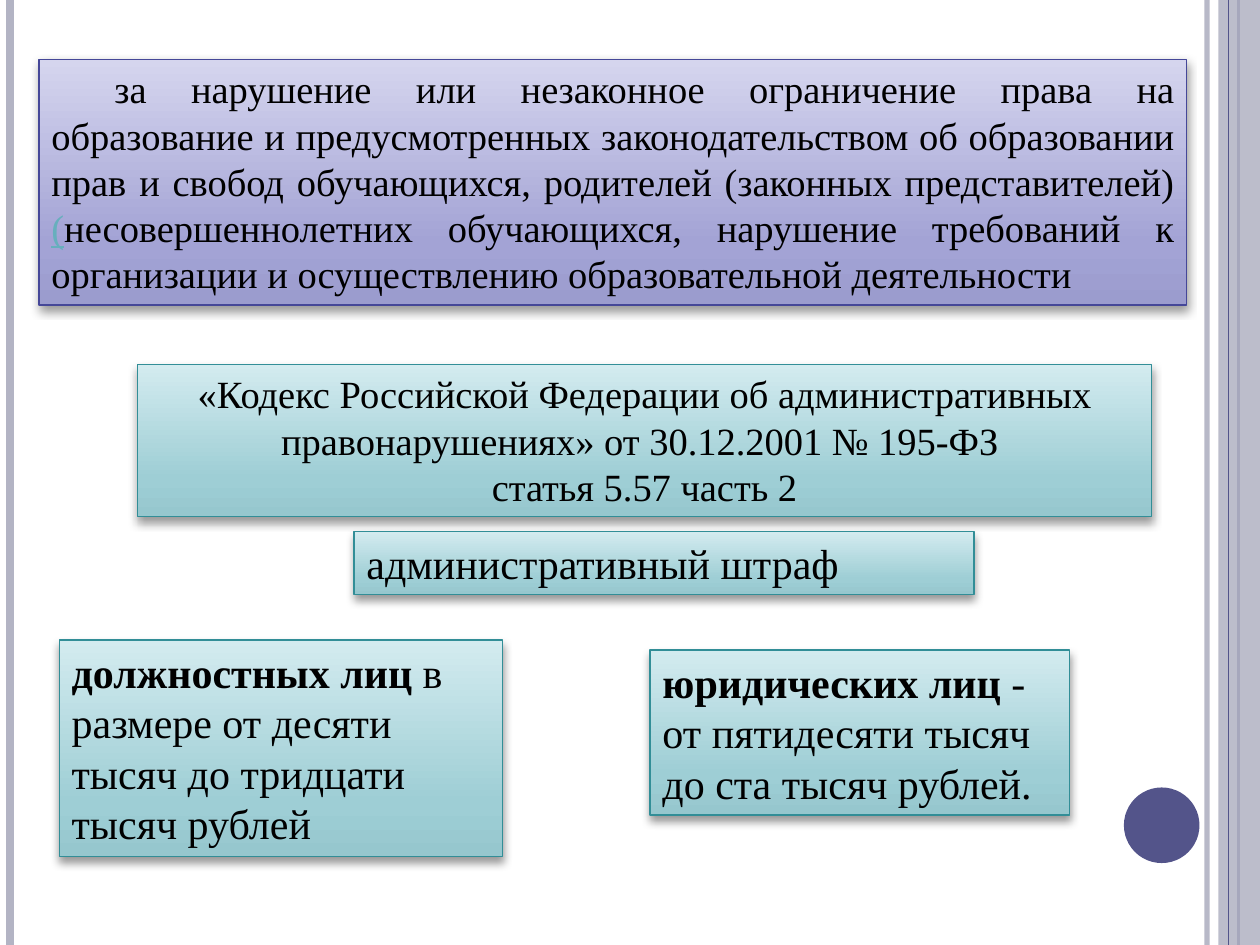
from copy import deepcopy

from lxml import etree
from pptx import Presentation, util as u
from pptx.dml.color import RGBColor
from pptx.enum import shapes, text
from pptx.oxml.ns import qn

THEME = {
    "font": "Times New Roman",
    "ink": "000000",
    "link": "67AFBD",
    "accent": "53548A",
    "stripe": "B3B4C4",
    "violet": {"stops": ("9B9CCE", "A3A3D5", "D5D5EE"), "line": "454798"},
    "teal": {"stops": ("96C7CE", "9ECED5", "D3EBEF"), "line": "328E97"},
    "stop_positions": (0, 0.25, 1),
    "text": 22,
    "large": 24,
    "outline": 0.75,
}

PAGE_WIDTH, PAGE_HEIGHT = 10, 7.5
LEFT, CENTER, JUSTIFY = (text.PP_ALIGN.LEFT, text.PP_ALIGN.CENTER,
                         text.PP_ALIGN.JUSTIFY)

# x, colour, width in points, opacity in percent
BACK_RULES = [(9.58, "stripe", 3, 93), (0.08, "stripe", 4.5, 100),
              (9.83, "accent", 1.5, 100)]
FRONT_RULE = (9.75, "accent", 0.75, 100)
SIDE_BAND = (9.67, 0, 0.33, PAGE_HEIGHT)
DOT = (8.92, 6.25, 0.6, 0.6)

# place, palette, size, alignment, first-line indent, (wording, style) runs
BOXES = [
    ((0.31, 0.47, 9.11, 1.95), "violet", "text", JUSTIFY, 0.5, [
        ("за нарушение или незаконное ограничение права на образование и "
         "предусмотренных законодательством об образовании прав и свобод "
         "обучающихся, родителей (законных представителей) ", "plain"),
        ("(", "link"),
        ("несовершеннолетних обучающихся, нарушение требований к организации "
         "и осуществлению образовательной деятельности", "plain")]),
    ((1.09, 2.89, 8.05, 1.21), "teal", "text", CENTER, 0, [
        ("«Кодекс Российской Федерации об административных "
         "правонарушениях» от 30.12.2001 № 195-ФЗ ", "plain"),
        ("\n", "break"),
        ("статья 5.57 часть 2", "plain")]),
    ((5.16, 5.16, 3.33, 1.31), "teal", "large", LEFT, 0, [
        ("юридических лиц ", "bold"),
        ("- от пятидесяти тысяч до ста тысяч рублей.", "plain")]),
    ((2.81, 4.22, 4.92, 0.5), "teal", "large", LEFT, 0, [
        ("административный штраф", "plain")]),
    ((0.47, 5.08, 3.52, 1.72), "teal", "large", LEFT, 0, [
        ("должностных лиц ", "bold"),
        ("в размере от десяти тысяч до тридцати тысяч рублей", "plain")]),
]


def color(name):
    return RGBColor.from_string(THEME.get(name, name))


def set_opacity(element, percent):
    """Make the first RGB colour below the element partly transparent."""
    rgb = next(element.iter(qn("a:srgbClr")))
    etree.SubElement(rgb, qn("a:alpha"), val=str(percent * 1000))


def add_rule(page, x, tone, width, opacity):
    rule = page.shapes.add_connector(
        shapes.MSO_CONNECTOR.STRAIGHT, u.Inches(x), 0,
        u.Inches(x), u.Inches(PAGE_HEIGHT))
    rule.line.color.rgb = color(tone)
    rule.line.width = u.Pt(width)
    properties = rule.element.spPr
    if opacity < 100:
        set_opacity(properties, opacity)
    etree.SubElement(properties, qn("a:effectLst"))


def add_figure(page, kind, place):
    figure = page.shapes.add_shape(kind, *map(u.Inches, place))
    figure.shadow.inherit = False
    return figure


def add_ornament(page, kind, place, tone):
    figure = add_figure(page, kind, place)
    figure.fill.solid()
    figure.fill.fore_color.rgb = color(tone)
    figure.line.fill.background()
    return figure


def fill_gradient(box, stops):
    """Fill from the bottom edge up with three colours."""
    box.fill.gradient()
    box.fill.gradient_angle = 90
    stop_list = next(box.element.spPr.iter(qn("a:gsLst")))
    stop_list.append(deepcopy(stop_list[0]))
    for stop, tone, position in zip(box.fill.gradient_stops, stops,
                                    THEME["stop_positions"]):
        stop.color.rgb = color(tone)
        stop.position = position


def drop_shadow(box):
    effects = box.element.spPr.find(qn("a:effectLst"))
    shadow = etree.SubElement(
        effects, qn("a:outerShdw"), blurRad=str(u.Pt(5.2)),
        dist=str(u.Pt(3)), dir="5400000", rotWithShape="0")
    etree.SubElement(shadow, qn("a:srgbClr"), val=THEME["ink"])
    set_opacity(shadow, 40)


def add_box(page, place, palette, size, alignment, indent, runs):
    box = add_figure(page, shapes.MSO_SHAPE.RECTANGLE, place)
    fill_gradient(box, THEME[palette]["stops"])
    box.line.color.rgb = color(THEME[palette]["line"])
    box.line.width = u.Pt(THEME["outline"])
    drop_shadow(box)

    frame = box.text_frame
    frame.word_wrap = True
    frame.auto_size = text.MSO_AUTO_SIZE.SHAPE_TO_FIT_TEXT
    frame.vertical_anchor = text.MSO_ANCHOR.TOP
    para = frame.paragraphs[0]
    para.alignment = alignment
    if indent:
        para._p.get_or_add_pPr().set("indent", str(u.Inches(indent)))
    for wording, style in runs:
        if style == "break":
            para.add_line_break()
            continue
        span = para.add_run()
        span.text = wording
        span.font.name = THEME["font"]
        span.font.size = u.Pt(THEME[size])
        span.font.bold = style == "bold"
        span.font.underline = style == "link"
        span.font.color.rgb = color("link" if style == "link" else "ink")


def main():
    deck = Presentation()
    deck.slide_width = u.Inches(PAGE_WIDTH)
    deck.slide_height = u.Inches(PAGE_HEIGHT)
    page = deck.slides.add_slide(deck.slide_layouts[6])
    for rule in BACK_RULES:
        add_rule(page, *rule)
    band = add_ornament(page, shapes.MSO_SHAPE.RECTANGLE, SIDE_BAND, "stripe")
    set_opacity(band.element.spPr, 87)
    add_rule(page, *FRONT_RULE)
    add_ornament(page, shapes.MSO_SHAPE.OVAL, DOT, "accent")
    for box in BOXES:
        add_box(page, *box)
    deck.save("out.pptx")


if __name__ == "__main__":
    main()
